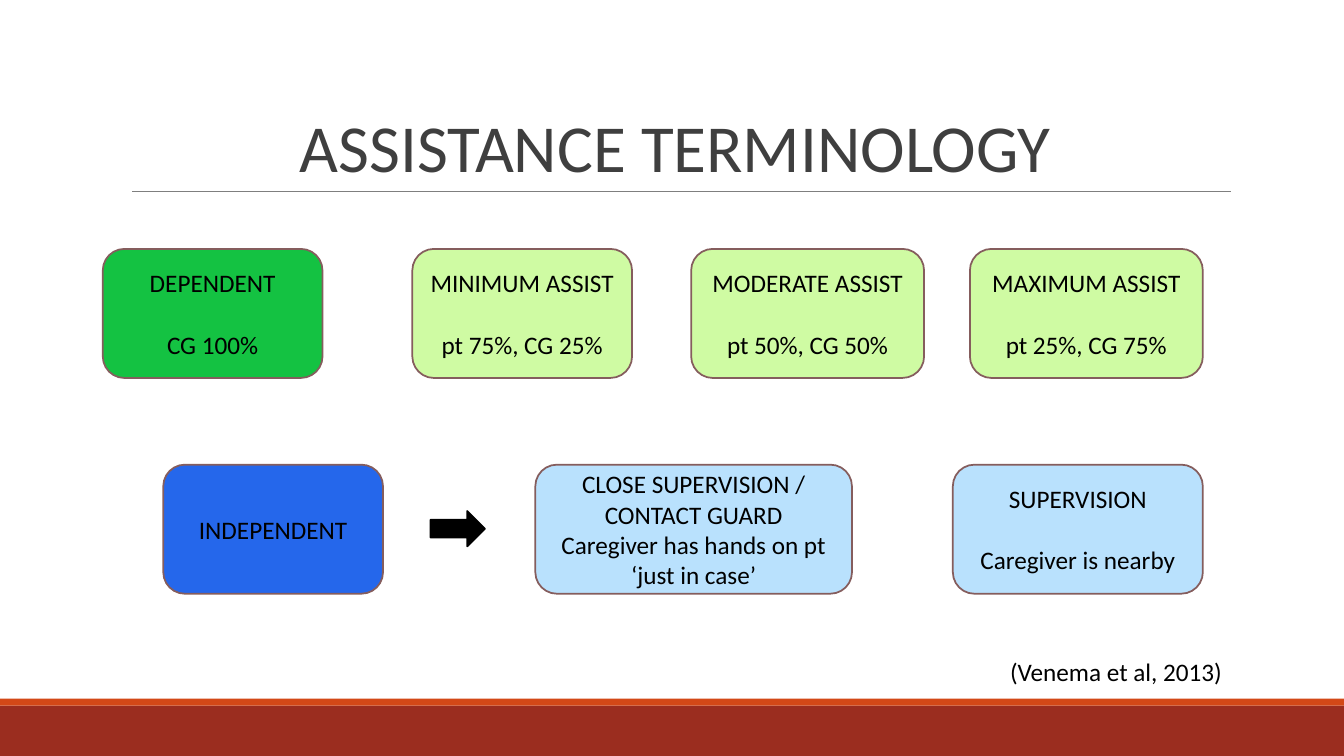
from dataclasses import dataclass

from lxml import etree
from pptx import Presentation
from pptx.dml.color import RGBColor
from pptx.enum.shapes import MSO_CONNECTOR, MSO_SHAPE
from pptx.enum.text import MSO_ANCHOR, MSO_AUTO_SIZE, PP_ALIGN
from pptx.oxml.ns import qn
from pptx.shapes.autoshape import Shape
from pptx.slide import Slide
from pptx.text.text import TextFrame
from pptx.util import Inches, Pt

RECTANGLE = MSO_SHAPE.RECTANGLE
ROUNDED = MSO_SHAPE.ROUNDED_RECTANGLE
RIGHT_ARROW = MSO_SHAPE.RIGHT_ARROW
STRAIGHT = MSO_CONNECTOR.STRAIGHT
CENTER, RIGHT = PP_ALIGN.CENTER, PP_ALIGN.RIGHT
TOP, MIDDLE, BOTTOM = MSO_ANCHOR.TOP, MSO_ANCHOR.MIDDLE, MSO_ANCHOR.BOTTOM

SLIDE_WIDTH, SLIDE_HEIGHT = Inches(13.33), Inches(7.5)


@dataclass(frozen=True)
class Theme:
    font: str = "Calibri"
    title_size: int = 48
    text_size: int = 18
    line_gap: int = 22
    border_width: float = 1.25
    rule_width: float = 0.75
    title: str = "3F3F3F"
    text: str = "000000"
    border: str = "855D5D"
    rule: str = "7F7F7F"
    footer: str = "9B2D1F"
    footer_edge: str = "D34817"
    dependent: str = "14C242"
    assist: str = "CFFBA3"
    supervision: str = "B9E1FD"
    independent: str = "2567EB"


THEME = Theme()


@dataclass(frozen=True)
class Area:
    """Left, top, width and height in percent of the slide."""
    left: float
    top: float
    width: float
    height: float

    def box(self) -> tuple[int, int, int, int]:
        return (across(self.left), down(self.top),
                across(self.width), down(self.height))


@dataclass(frozen=True)
class Level:
    """One level of assistance: its card and its wording."""
    left: float
    top: float
    width: float
    fill: str
    lines: tuple[str, ...]
    spaced: bool = True


# Card rows and the shared card size
ASSIST_ROW, SUPERVISION_ROW = 32.93, 61.47
CARD_HEIGHT = 17.07
NARROW, WIDE = 16.35, 17.33

LEVELS = (
    Level(7.65, ASSIST_ROW, NARROW, THEME.dependent, ("DEPENDENT", "CG 100%")),
    Level(30.68, ASSIST_ROW, NARROW, THEME.assist,
          ("MINIMUM ASSIST", "pt 75%, CG 25%")),
    Level(51.43, ASSIST_ROW, WIDE, THEME.assist,
          ("MODERATE ASSIST", "pt 50%, CG 50%")),
    Level(72.17, ASSIST_ROW, WIDE, THEME.assist,
          ("MAXIMUM ASSIST", "pt 25%, CG 75%")),
    Level(12.15, SUPERVISION_ROW, NARROW, THEME.independent, ("INDEPENDENT",)),
    Level(39.83, SUPERVISION_ROW, 23.56, THEME.supervision,
          ("CLOSE SUPERVISION / CONTACT GUARD",
           "Caregiver has hands on pt ‘just in case’"), spaced=False),
    Level(70.9, SUPERVISION_ROW, 18.6, THEME.supervision,
          ("SUPERVISION", "Caregiver is nearby")),
)


def across(percent: float) -> int:
    return round(SLIDE_WIDTH * percent / 100)


def down(percent: float) -> int:
    return round(SLIDE_HEIGHT * percent / 100)


def color(value: str) -> RGBColor:
    return RGBColor.from_string(value)


def write(frame: TextFrame, lines: tuple[str, ...], align: PP_ALIGN,
          anchor: MSO_ANCHOR, size: int = THEME.text_size,
          ink: str = THEME.text, gap: int = 0) -> None:
    frame.word_wrap = True
    frame.vertical_anchor = anchor
    for index, line in enumerate(lines):
        paragraph = frame.add_paragraph() if index else frame.paragraphs[0]
        paragraph.alignment = align
        paragraph.space_before = Pt(gap if index else 0)
        run = paragraph.add_run()
        run.text = line
        run.font.name = THEME.font
        run.font.size = Pt(size)
        run.font.color.rgb = color(ink)


def draw_shape(slide: Slide, kind: MSO_SHAPE, area: Area, fill: str,
               border: str | None = None) -> Shape:
    shape = slide.shapes.add_shape(kind, *area.box())
    shape.shadow.inherit = False
    shape.fill.solid()
    shape.fill.fore_color.rgb = color(fill)
    if border:
        shape.line.color.rgb = color(border)
        shape.line.width = Pt(THEME.border_width)
    else:
        shape.line.fill.background()
    return shape


def draw_level(slide: Slide, level: Level) -> None:
    area = Area(level.left, level.top, level.width, CARD_HEIGHT)
    card = draw_shape(slide, ROUNDED, area, level.fill, THEME.border)
    write(card.text_frame, level.lines, CENTER, MIDDLE,
          gap=THEME.line_gap if level.spaced else 0)


def draw_title_rule(slide: Slide) -> None:
    height = down(25.33)
    rule = slide.shapes.add_connector(
        STRAIGHT, across(9.83), height, across(91.6), height)
    rule.line.color.rgb = color(THEME.rule)
    rule.line.width = Pt(THEME.rule_width)
    etree.SubElement(rule._element.spPr, qn("a:effectLst"))


def draw_title(slide: Slide) -> None:
    title = slide.shapes.title
    title.left, title.top, title.width, title.height = Area(
        9, 4.13, 82.52, 21.2).box()
    write(title.text_frame, ("ASSISTANCE TERMINOLOGY",), CENTER, BOTTOM,
          THEME.title_size, THEME.title)
    title.text_frame.auto_size = MSO_AUTO_SIZE.NONE
    title.text_frame.paragraphs[0].line_spacing = 0.85


def draw_citation(slide: Slide) -> None:
    citation = slide.shapes.add_textbox(*Area(74.19, 86.13, 17.48, 5.33).box())
    write(citation.text_frame, ("(Venema et al, 2013)",), RIGHT, TOP)
    citation.text_frame.auto_size = MSO_AUTO_SIZE.SHAPE_TO_FIT_TEXT


def main() -> None:
    deck = Presentation()
    deck.slide_width, deck.slide_height = SLIDE_WIDTH, SLIDE_HEIGHT
    slide = deck.slides.add_slide(deck.slide_layouts.get_by_name("Title Only"))

    # Footer bands
    draw_shape(slide, RECTANGLE, Area(0, 93.33, 100, 6.67), THEME.footer)
    draw_shape(slide, RECTANGLE, Area(0, 92.4, 100, 0.93), THEME.footer_edge)

    # Heading
    draw_title_rule(slide)
    draw_title(slide)

    # Levels of assistance
    for level in LEVELS:
        draw_level(slide, level)
    draw_shape(slide, RIGHT_ARROW, Area(32.03, 67.6, 4.05, 4.67),
               THEME.text, THEME.text)

    # Source
    draw_citation(slide)
    deck.save("out.pptx")


if __name__ == "__main__":
    main()
